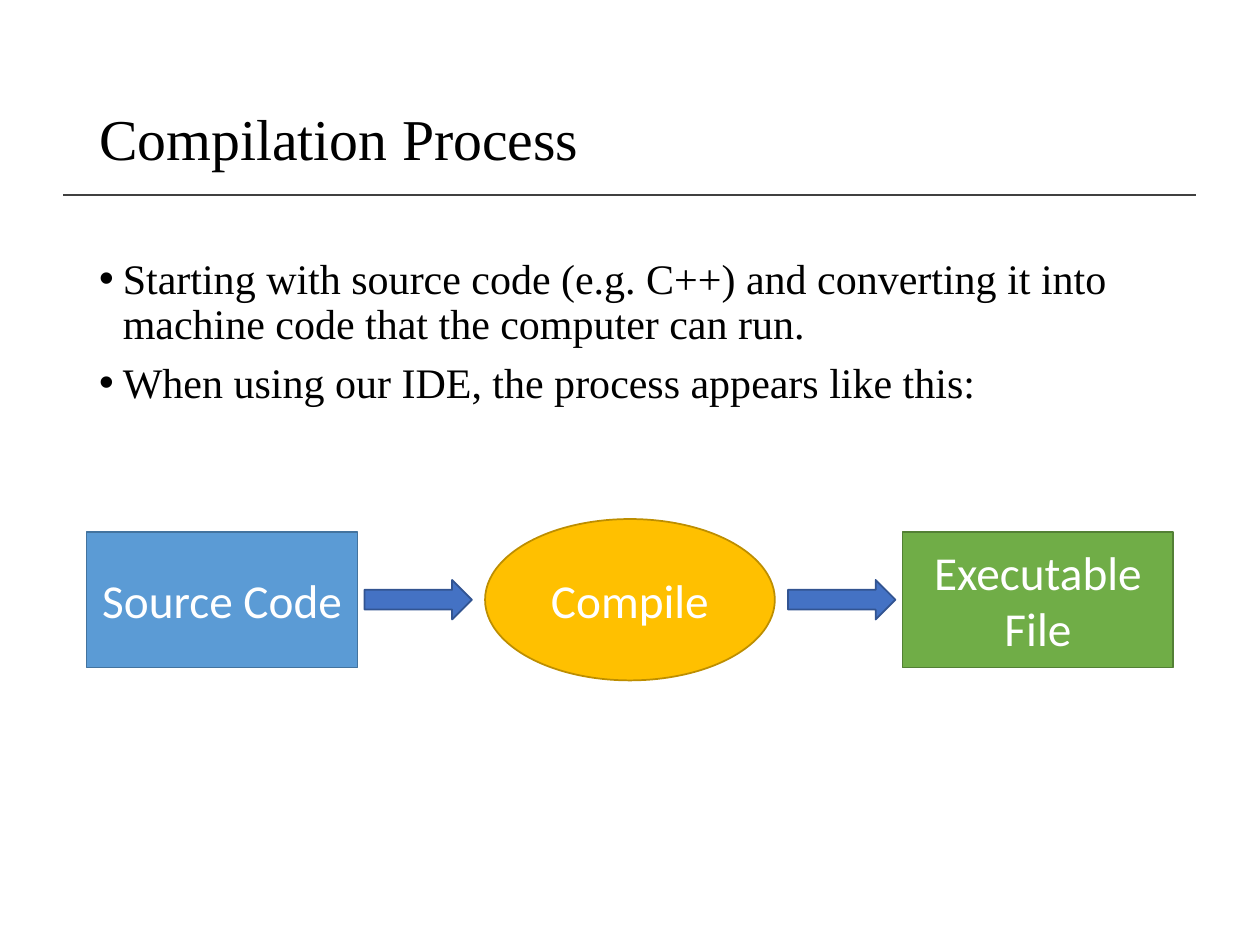
from dataclasses import dataclass

from lxml import etree
from pptx import Presentation
from pptx.dml.color import RGBColor
from pptx.enum.shapes import MSO_CONNECTOR, MSO_SHAPE
from pptx.enum.text import MSO_ANCHOR, MSO_AUTO_SIZE, PP_ALIGN
from pptx.oxml.ns import qn
from pptx.shapes.base import BaseShape
from pptx.slide import Slide
from pptx.text.text import TextFrame
from pptx.util import Pt

RECT, OVAL, ARROW = MSO_SHAPE.RECTANGLE, MSO_SHAPE.OVAL, MSO_SHAPE.RIGHT_ARROW
LINE = MSO_CONNECTOR.STRAIGHT
LEFT, CENTER = PP_ALIGN.LEFT, PP_ALIGN.CENTER
TOP, MIDDLE = MSO_ANCHOR.TOP, MSO_ANCHOR.MIDDLE
NO_FIT = MSO_AUTO_SIZE.NONE


@dataclass(frozen=True)
class Theme:
    serif: str = "Times New Roman"
    sans: str = "Calibri"
    title: float = 33
    body: float = 24
    label: float = 27
    ink: str = "000000"
    light: str = "FFFFFF"
    rule: str = "404040"
    blue: tuple[str, str] = ("5B9BD5", "43739E")
    gold: tuple[str, str] = ("FFC000", "BD8E00")
    green: tuple[str, str] = ("70AD47", "538035")
    navy: tuple[str, str] = ("4472C4", "325491")


@dataclass(frozen=True)
class Step:
    kind: int
    left: float
    width: float
    height: float
    paint: tuple[str, str]
    label: str = ""


THEME = Theme()
WIDTH, HEIGHT = 720, 540
EDGE = 49.5
SPAN = WIDTH - 2 * EDGE
MID = 342.7
BOX = (154.8, 77.6)
OVAL_SIZE = (165.6, 92.2)
ARROW_SIZE = (61.4, 22.6)
GAP = 4

STEPS = (
    Step(RECT, EDGE, *BOX, THEME.blue, "Source Code"),
    Step(ARROW, EDGE + BOX[0] + GAP, *ARROW_SIZE, THEME.navy),
    Step(OVAL, (WIDTH - OVAL_SIZE[0]) / 2, *OVAL_SIZE, THEME.gold, "Compile"),
    Step(ARROW, WIDTH - EDGE - BOX[0] - GAP - ARROW_SIZE[0], *ARROW_SIZE, THEME.navy),
    Step(RECT, WIDTH - EDGE - BOX[0], *BOX, THEME.green, "Executable File"),
)
POINTS = (
    "Starting with source code (e.g. C++) and converting it into machine code "
    "that the computer can run.",
    "When using our IDE, the process appears like this:",
)


def write(frame: TextFrame, *lines: str, font: str, size: float, color: str,
          align: int = LEFT, anchor: int = MIDDLE, space: float = 1.0,
          before: float = 0, indent: float = 0) -> None:
    frame.auto_size = NO_FIT
    frame.word_wrap = True
    frame.vertical_anchor = anchor
    for i, line in enumerate(lines):
        para = frame.add_paragraph() if i else frame.paragraphs[0]
        para.alignment = align
        para.line_spacing = space
        para.space_before = Pt(before)
        if indent:
            props = para._p.get_or_add_pPr()
            props.set("marL", str(Pt(indent)))
            props.set("indent", str(-Pt(indent)))
        run = para.add_run()
        run.text = line
        run.font.name = font
        run.font.size = Pt(size)
        run.font.color.rgb = RGBColor.from_string(color)


def place(shape: BaseShape, left: float, top: float, width: float, height: float) -> None:
    shape.left, shape.top = Pt(left), Pt(top)
    shape.width, shape.height = Pt(width), Pt(height)


def draw_rule(slide: Slide) -> None:
    rule = slide.shapes.add_connector(LINE, Pt(36), Pt(111.6), Pt(683.3), Pt(111.6))
    rule.line.width = Pt(1)
    rule.line.color.rgb = RGBColor.from_string(THEME.rule)
    etree.SubElement(rule._element.spPr, qn("a:effectLst"))


def draw_step(slide: Slide, step: Step) -> None:
    shape = slide.shapes.add_shape(step.kind, Pt(step.left), Pt(MID - step.height / 2),
                                   Pt(step.width), Pt(step.height))
    fill, edge = step.paint
    shape.shadow.inherit = False
    shape.fill.solid()
    shape.fill.fore_color.rgb = RGBColor.from_string(fill)
    shape.line.color.rgb = RGBColor.from_string(edge)
    shape.line.width = Pt(1)
    if step.label:
        write(shape.text_frame, step.label, font=THEME.sans, size=THEME.label,
              color=THEME.light, align=CENTER)


def main() -> None:
    deck = Presentation()
    deck.slide_width, deck.slide_height = Pt(WIDTH), Pt(HEIGHT)
    slide = deck.slides.add_slide(deck.slide_layouts[1])
    draw_rule(slide)
    title, body = slide.shapes.title, slide.placeholders[1]
    place(title, EDGE, 28.8, SPAN, 104.4)
    write(title.text_frame, "Compilation Process", font=THEME.serif,
          size=THEME.title, color=THEME.ink, space=0.9)
    place(body, EDGE, 144, SPAN, 342.7)
    write(body.text_frame, *POINTS, font=THEME.serif, size=THEME.body,
          color=THEME.ink, anchor=TOP, space=0.9, before=7.5, indent=13.5)
    for step in STEPS:
        draw_step(slide, step)
    deck.save("out.pptx")


if __name__ == "__main__":
    main()
